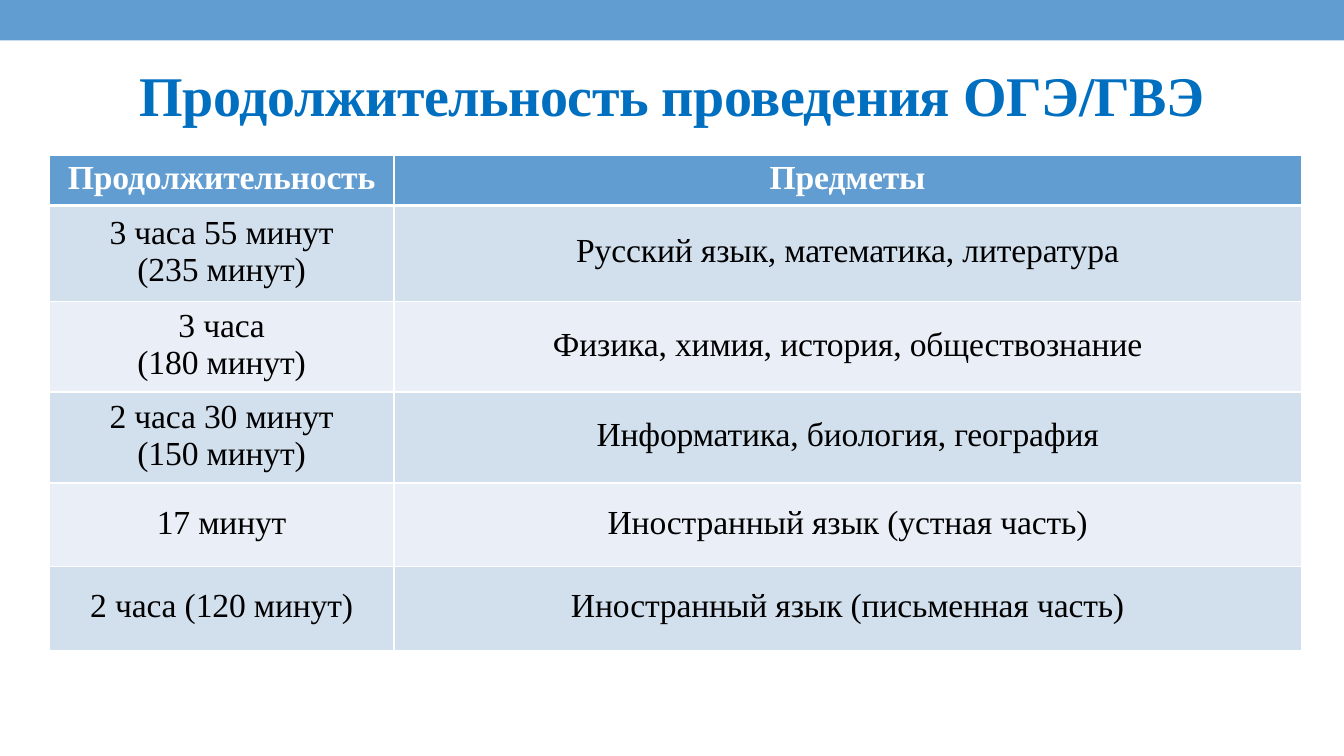
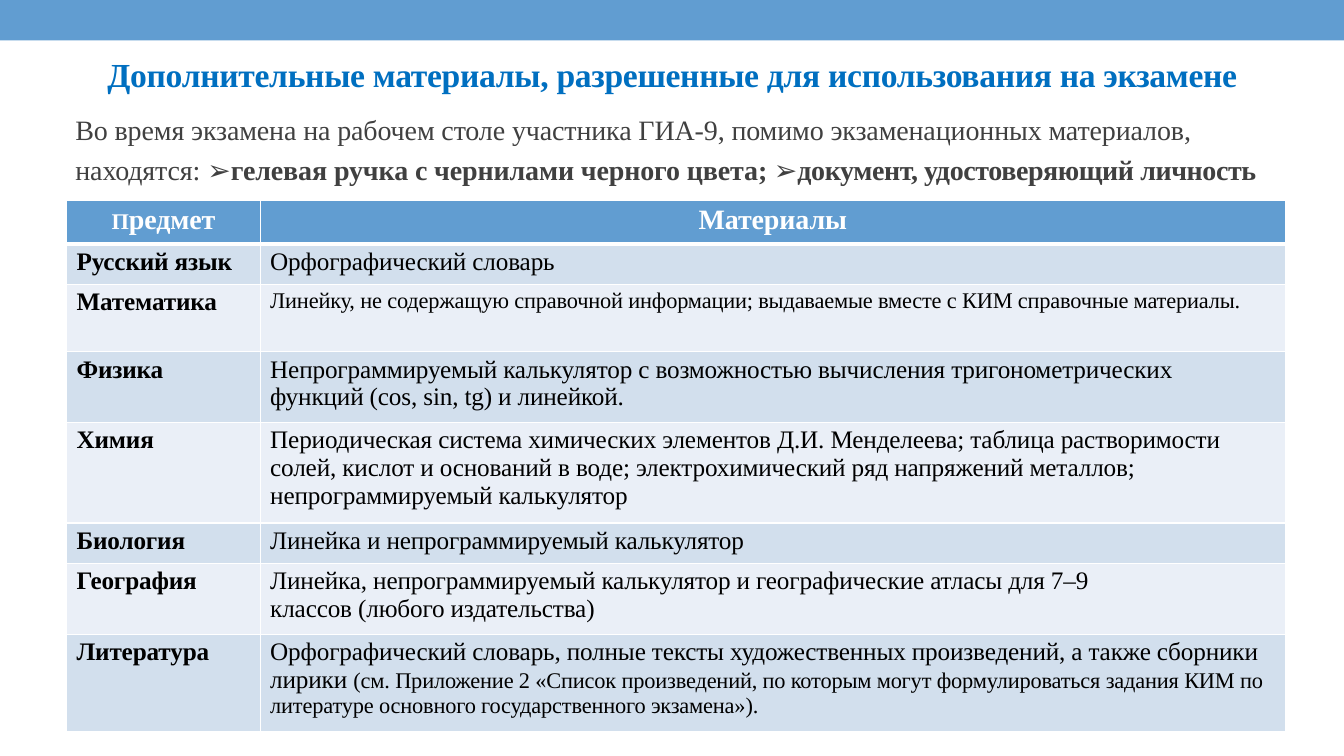
from dataclasses import dataclass, replace

from lxml.etree import SubElement
from pptx import Presentation
from pptx.dml.color import RGBColor
from pptx.enum.shapes import MSO_SHAPE
from pptx.enum.text import MSO_ANCHOR, MSO_AUTO_SIZE, PP_ALIGN
from pptx.oxml.ns import qn
from pptx.util import Cm, Pt

# Shared look
COLORS = {
    "band": "619DD1",
    "title": "006FC0",
    "intro": "404040",
    "text": "000000",
    "white": "FFFFFF",
    "odd_row": "D2DFED",
    "even_row": "EAEFF7",
}
SLIDE_WIDTH, SLIDE_HEIGHT = 33.87, 19.05
BAND_HEIGHT = 1.02
TITLE_ONLY = 5


@dataclass(frozen=True)
class Style:
    """Character format; spacing is in points."""
    size: float
    color: str = "text"
    bold: bool = False
    spacing: float = -0.1
    font: str = "Times New Roman"


@dataclass(frozen=True)
class TableLook:
    """Format of a whole table; lengths are in centimetres."""
    header: Style
    columns: tuple
    body_align: PP_ALIGN
    anchor: MSO_ANCHOR
    left: float = 0
    top: float = 0
    bottom: float = 0


def color(name):
    return RGBColor.from_string(COLORS[name])


def add_span(para, text, style):
    span = para.add_run()
    span.text = text
    font = span.font
    font.name, font.size, font.bold = style.font, Pt(style.size), style.bold
    font.color.rgb = color(style.color)
    font._element.set("spc", str(round(style.spacing * 100)))


def write(frame, content, style, align=PP_ALIGN.LEFT, line_spacing=1.0):
    """Content is a string with line breaks, or a list of (text, style) spans."""
    if isinstance(content, str):
        lines = [[(line, style)] for line in content.split("\n")]
    else:
        lines = [content]
    for index, spans in enumerate(lines):
        para = frame.add_paragraph() if index else frame.paragraphs[0]
        para.alignment, para.line_spacing = align, line_spacing
        para.space_before = para.space_after = Pt(0)
        for text, span_style in spans:
            add_span(para, text, span_style)


def prepare_frame(frame):
    frame.word_wrap = True
    frame.auto_size = MSO_AUTO_SIZE.NONE
    frame.vertical_anchor = MSO_ANCHOR.TOP
    frame.margin_left = frame.margin_right = frame.margin_bottom = 0
    frame.margin_top = Cm(0.03)


def place(box, left, top, width, height):
    box.left, box.top, box.width, box.height = map(Cm, (left, top, width, height))


def add_page(deck, title, margin, top, height, style):
    page = deck.slides.add_slide(deck.slide_layouts[TITLE_ONLY])

    # Top band
    band = page.shapes.add_shape(
        MSO_SHAPE.RECTANGLE, 0, 0, deck.slide_width, Cm(BAND_HEIGHT))
    band.shadow.inherit = False
    band.fill.solid()
    band.fill.fore_color.rgb = color("band")
    band.line.fill.background()

    # Title, centred between equal margins
    box = page.shapes.title
    place(box, margin, top, SLIDE_WIDTH - 2 * margin, height)
    prepare_frame(box.text_frame)
    write(box.text_frame, title, style, PP_ALIGN.CENTER, 1.0)
    return page


def add_text(page, bounds, content, style, line_spacing):
    box = page.shapes.add_textbox(*map(Cm, bounds))
    prepare_frame(box.text_frame)
    write(box.text_frame, content, style, line_spacing=line_spacing)


def set_borders(cell, **widths):
    properties = cell._tc.get_or_add_tcPr()
    for side in "LRTB":
        line = SubElement(properties, qn(f"a:ln{side}"),
                          w=str(Pt(widths.get(side, 1))))
        fill = SubElement(line, qn("a:solidFill"))
        SubElement(fill, qn("a:srgbClr"), val=COLORS["white"])


def add_table(page, left, top, widths, rows, look):
    """Each row is its height followed by the content of its cells."""
    heights = [row[0] for row in rows]
    table = page.shapes.add_table(
        len(rows), len(widths), Cm(left), Cm(top),
        Cm(sum(widths)), Cm(sum(heights))).table
    for column, width in zip(table.columns, widths):
        column.width = Cm(width)
    for row_index, (height, *contents) in enumerate(rows):
        table.rows[row_index].height = Cm(height)
        is_header = row_index == 0
        fill = "band" if is_header else ("even_row", "odd_row")[row_index % 2]
        for column_index, content in enumerate(contents):
            cell = table.cell(row_index, column_index)
            set_borders(cell, T=3 if row_index == 1 else 1, B=3 if is_header else 1)
            cell.fill.solid()
            cell.fill.fore_color.rgb = color(fill)
            cell.vertical_anchor = look.anchor
            cell.margin_left = Cm(0 if is_header else look.left)
            cell.margin_right = 0
            cell.margin_top, cell.margin_bottom = Cm(look.top), Cm(look.bottom)
            style = look.header if is_header else look.columns[column_index]
            align = PP_ALIGN.CENTER if is_header else look.body_align
            write(cell.text_frame, content, style, align)


def add_duration_page(deck):
    title = Style(40, "title", True, -0.3)
    page = add_page(deck, "Продолжительность проведения ОГЭ/ГВЭ", 3.4, 1.5, 1.75, title)

    body = Style(24)
    look = TableLook(Style(24, "white", True), (body, body),
                     PP_ALIGN.CENTER, MSO_ANCHOR.MIDDLE, bottom=0.1)
    rows = [
        (1.27, "Продолжительность", "Предметы"),
        (2.41, "3 часа 55 минут\n(235 минут)", "Русский язык, математика, литература"),
        (2.29, "3 часа\n(180 минут)", "Физика, химия, история, обществознание"),
        (2.29, "2 часа 30 минут\n(150 минут)", "Информатика, биология, география"),
        (2.11, "17 минут", "Иностранный язык (устная часть)"),
        (2.11, "2 часа (120 минут)", "Иностранный язык (письменная часть)"),
    ]
    add_table(page, 1.24, 3.91, (8.69, 22.86), rows, look)


def add_materials_page(deck):
    title = Style(24, "title", True, -0.24)
    page = add_page(
        deck, "Дополнительные материалы, разрешенные для использования на экзамене",
        2.6, 1.32, 1.09, title)

    # Items on the desk
    intro = Style(20, "intro")
    strong = replace(intro, bold=True)
    arrow = replace(intro, font="Arial")
    add_text(page, (1.9, 2.64, 30.1, 2.11), [
        ("Во время экзамена на рабочем столе участника ГИА-9, "
         "помимо экзаменационных материалов, находятся: ", intro),
        ("➢", arrow),
        ("гелевая ручка с чернилами черного цвета; ", strong),
        ("➢", replace(arrow, spacing=-0.5)),
        ("документ, удостоверяющий личность", replace(strong, spacing=-0.3)),
    ], intro, 1.2)

    # Materials by subject
    header = Style(20, "white", True)
    body = Style(18)
    small = Style(16)
    look = TableLook(header, (replace(body, bold=True), body),
                     PP_ALIGN.LEFT, MSO_ANCHOR.TOP, left=0.25, top=0.1)
    rows = [
        (1.09, [("П", replace(header, size=16)), ("редмет", header)], "Материалы"),
        (1.02, "Русский язык", "Орфографический словарь"),
        (1.7, "Математика", [
            ("Линейку, не содержащую справочной информации; "
             "выдаваемые вместе с КИМ справочные материалы.", small)]),
        (1.78, "Физика",
         "Непрограммируемый калькулятор с возможностью вычисления тригонометрических\n"
         "функций (cos, sin, tg) и линейкой."),
        (2.54, "Химия",
         "Периодическая система химических элементов Д.И. Менделеева; "
         "таблица растворимости солей, кислот и оснований в воде; "
         "электрохимический ряд напряжений металлов;\n"
         "непрограммируемый калькулятор"),
        (1.02, "Биология", "Линейка и непрограммируемый калькулятор"),
        (1.78, "География",
         "Линейка, непрограммируемый калькулятор и географические атласы для 7–9\n"
         "классов (любого издательства)"),
        (2.46, "Литература", [
            ("Орфографический словарь, полные тексты художественных произведений, "
             "а также сборники лирики ", body),
            ("(см. Приложение 2 «Список произведений, по которым могут "
             "формулироваться задания КИМ по литературе основного "
             "государственного экзамена»).", small)]),
    ]
    add_table(page, 1.68, 5.05, (4.88, 25.83), rows, look)


def main():
    deck = Presentation()
    deck.slide_width, deck.slide_height = Cm(SLIDE_WIDTH), Cm(SLIDE_HEIGHT)
    add_duration_page(deck)
    add_materials_page(deck)
    deck.save("out.pptx")


if __name__ == "__main__":
    main()
